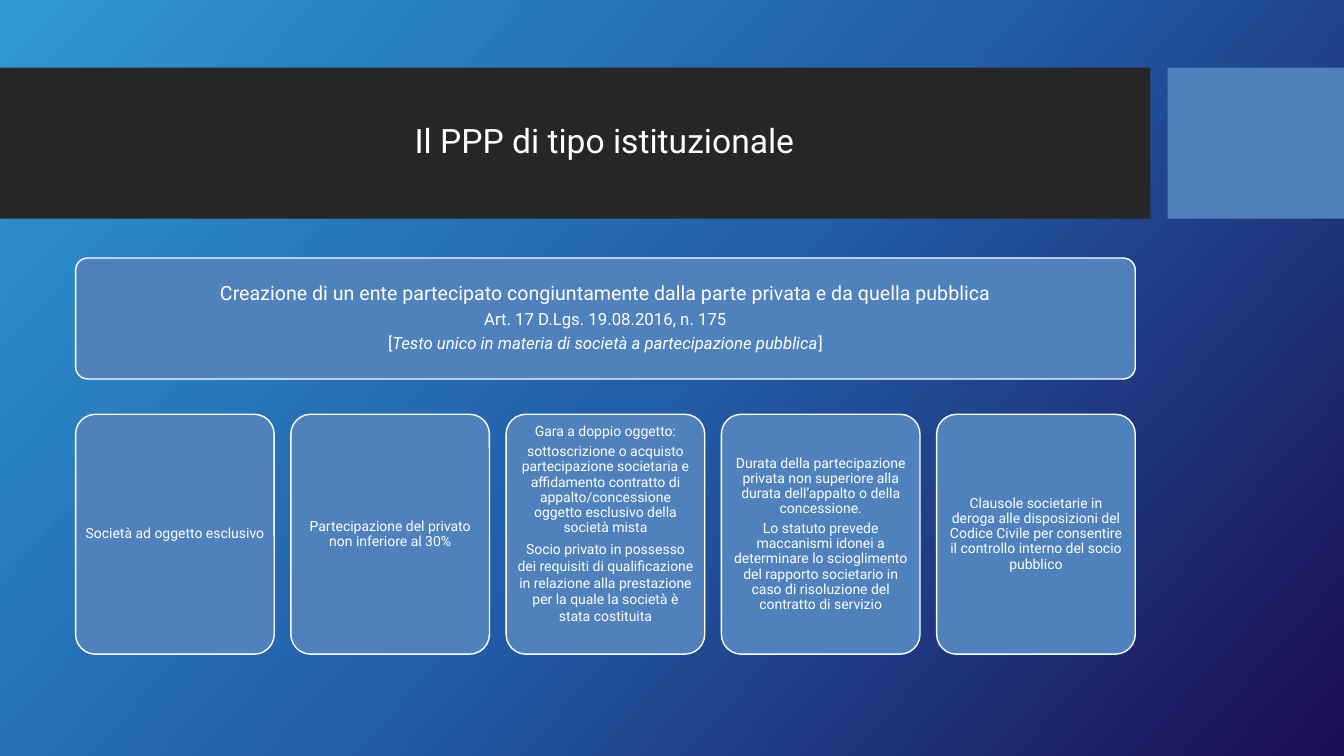
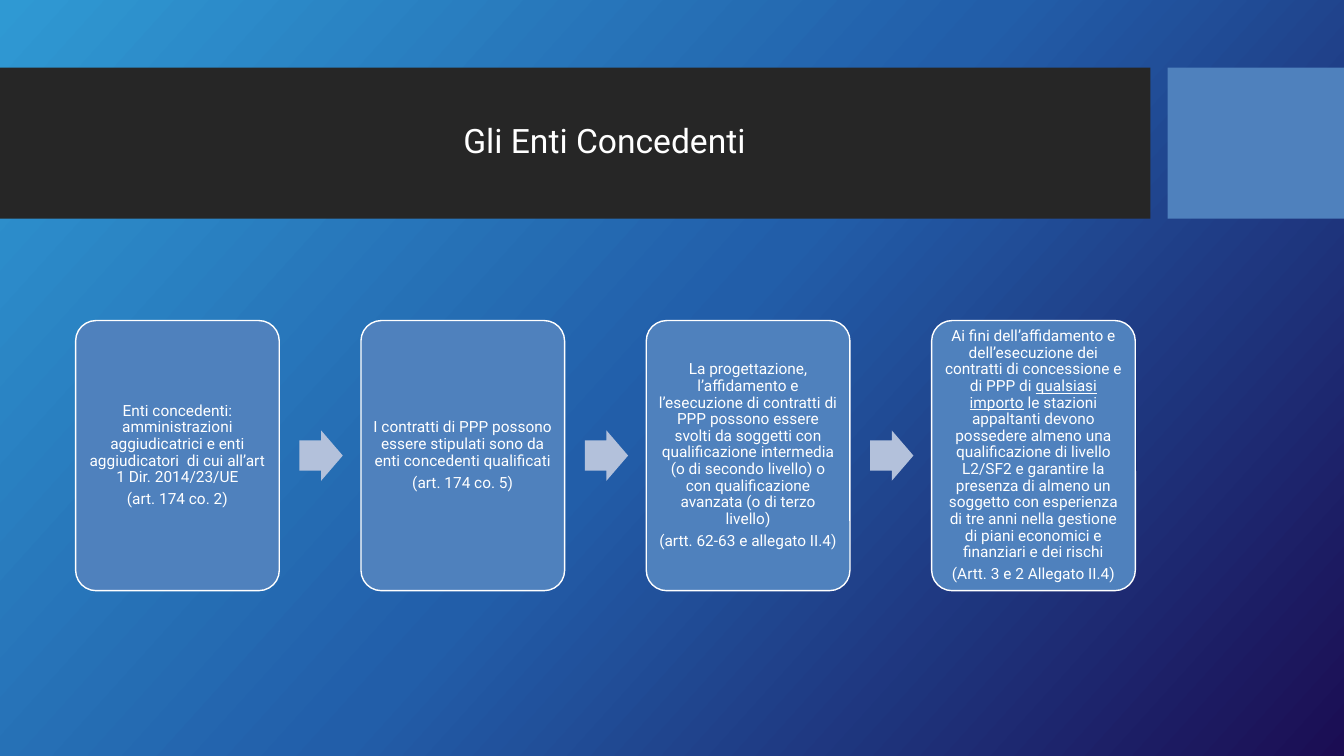
from copy import deepcopy

from pptx import Presentation
from pptx.dml.color import RGBColor
from pptx.enum.shapes import MSO_SHAPE
from pptx.enum.text import MSO_ANCHOR, PP_ALIGN
from pptx.oxml.ns import qn
from pptx.util import Inches, Pt

RECTANGLE = MSO_SHAPE.RECTANGLE
ROUNDED = MSO_SHAPE.ROUNDED_RECTANGLE
ARROW = MSO_SHAPE.RIGHT_ARROW
MIDDLE = MSO_ANCHOR.MIDDLE
CENTER = PP_ALIGN.CENTER
TITLE_ONLY = 5

FONT = "Roboto"
WHITE, DARK, BLUE, PALE = "FFFFFF", "262626", "4F81BD", "B3C1DB"
GRADIENT = [(0, "2F99D3"), (0.5, "225EA9"), (1, "1B0D53")]
LEFT, WIDTH = 0.75, 10.51


def color(value):
    return RGBColor.from_string(value)


def write(frame, paragraphs, size, margin=None, bottom=None):
    """Fill a frame; a paragraph is a dict with spans and optional size, line and after."""
    frame.word_wrap = True
    frame.vertical_anchor = MIDDLE
    if margin is not None:
        frame.margin_left = frame.margin_right = frame.margin_top = Inches(margin)
        frame.margin_bottom = Inches(margin if bottom is None else bottom)
    for index, item in enumerate(paragraphs):
        item = {"spans": item} if not isinstance(item, dict) else item
        spans = [(item["spans"], {})] if isinstance(item["spans"], str) else item["spans"]
        points = item.get("size", size)
        para = frame.paragraphs[0] if index == 0 else frame.add_paragraph()
        para.alignment = CENTER
        para.line_spacing = item.get("line", 0.9)
        para.space_before = Pt(0)
        para.space_after = Pt(item.get("after", round(0.35 * points, 2)))
        for text, style in spans:
            span = para.add_run()
            span.text = text
            font = span.font
            font.name, font.size = FONT, Pt(points)
            font.color.rgb = color(WHITE)
            for name, value in style.items():
                setattr(font, name, value)


class Deck:
    """Holds the presentation, its shared style and the current page."""

    def __init__(self):
        self.file = Presentation()
        self.file.slide_width, self.file.slide_height = Inches(13.33), Inches(7.5)
        self.page = None
        self.set_background()

    def set_background(self):
        master = self.file.slide_master
        fill = master.background.fill
        fill.gradient()
        fill.gradient_angle = 360 - 42
        stop_list = master.element.find(".//" + qn("a:gsLst"))
        stop_list.append(deepcopy(stop_list[-1]))
        for stop, (position, value) in zip(fill.gradient_stops, GRADIENT):
            stop.position = position
            stop.color.rgb = color(value)

    def add_page(self, title):
        self.page = self.file.slides.add_slide(self.file.slide_layouts[TITLE_ONLY])
        self.shape(RECTANGLE, 0, 0.67, 11.41, 1.5, DARK)
        self.shape(RECTANGLE, 11.58, 0.67, 1.75, 1.5, BLUE)
        box = self.page.shapes.title
        box.left, box.top = Inches(0.74), Inches(0.82)
        box.width, box.height = Inches(WIDTH), Inches(1.18)
        write(box.text_frame, [{"spans": title, "after": 0}], 24)
        self.page.shapes._spTree.append(box._element)  # title above the bands

    def shape(self, kind, left, top, width, height, fill, adjustments=()):
        shape = self.page.shapes.add_shape(
            kind, Inches(left), Inches(top), Inches(width), Inches(height))
        shape.shadow.inherit = False
        shape.fill.solid()
        shape.fill.fore_color.rgb = color(fill)
        shape.line.fill.background()
        for index, value in enumerate(adjustments):
            shape.adjustments[index] = value
        return shape

    def card(self, left, top, width, height, paragraphs, **text_format):
        card = self.shape(ROUNDED, left, top, width, height, BLUE, [0.1])
        card.line.color.rgb = color(WHITE)
        card.line.width = Pt(1)
        write(card.text_frame, paragraphs, **text_format)

    def arrow(self, left, top):
        self.shape(ARROW, left, top, 0.43, 0.5, PALE, [0.6, 0.5])


def card_lefts(count, width):
    """Left edges of equally spaced cards across the content width."""
    return [LEFT + index * (WIDTH - width) / (count - 1) for index in range(count)]


def build_institutional(deck):
    deck.add_page("Il PPP di tipo istituzionale")
    deck.card(LEFT, 2.56, WIDTH, 1.2, [
        {"spans": "Creazione di un ente partecipato congiuntamente dalla parte privata "
                  "e da quella pubblica", "size": 14},
        "Art. 17 D.Lgs. 19.08.2016, n. 175",
        [("[", {}),
         ("Testo unico in materia di società a partecipazione pubblica", {"italic": True}),
         ("]", {})],
    ], size=12, margin=0.06)
    features = [
        ["Società ad oggetto esclusivo"],
        ["Partecipazione del privato non inferiore al 30%"],
        ["Gara a doppio oggetto:",
         "sottoscrizione o acquisto partecipazione societaria e affidamento contratto di "
         "appalto/concessione oggetto esclusivo della società mista",
         {"spans": "Socio privato in possesso dei requisiti di qualificazione in relazione "
                   "alla prestazione per la quale la società è stata costituita",
          "line": 1.0, "after": 0}],
        ["Durata della partecipazione privata non superiore alla durata dell’appalto o "
         "della concessione.",
         "Lo statuto prevede maccanismi idonei a determinare lo scioglimento del rapporto "
         "societario in caso di risoluzione del contratto di servizio"],
        ["Clausole societarie in deroga alle disposizioni del Codice Civile per consentire "
         "il controllo interno del socio pubblico"],
    ]
    width = 1.97
    for left, paragraphs in zip(card_lefts(len(features), width), features):
        bottom = 0.23 if len(paragraphs) == 3 else 0.04
        deck.card(left, 4.11, width, 2.38, paragraphs, size=10, margin=0.04, bottom=bottom)


def build_grantors(deck):
    deck.add_page("Gli Enti Concedenti")
    steps = [
        ["Enti concedenti: amministrazioni aggiudicatrici e enti aggiudicatori  di cui "
         "all’art 1 Dir. 2014/23/UE",
         "(art. 174 co. 2)"],
        ["I contratti di PPP possono essere stipulati sono da enti concedenti qualificati",
         "(art. 174 co. 5)"],
        ["La progettazione, l’affidamento e l’esecuzione di contratti di PPP possono essere "
         "svolti da soggetti con qualificazione intermedia (o di secondo livello) o con "
         "qualificazione avanzata (o di terzo livello)",
         "(artt. 62-63 e allegato II.4)"],
        [[("Ai fini dell’affidamento e dell’esecuzione dei contratti di concessione e di "
           "PPP di ", {}),
          ("qualsiasi importo", {"underline": True}),
          (" le stazioni appaltanti devono possedere almeno una qualificazione di livello "
           "L2/SF2 e garantire la presenza di almeno un soggetto con esperienza di tre anni "
           "nella gestione di piani economici e finanziari e dei rischi", {})],
         "(Artt. 3 e 2 Allegato II.4)"],
    ]
    width = 2.02
    lefts = card_lefts(len(steps), width)
    for left, paragraphs in zip(lefts, steps):
        deck.card(left, 3.18, width, 2.68, paragraphs, size=11, margin=0.05)
    for left in lefts[:-1]:
        deck.arrow(left + width + 0.2, 4.27)


def main():
    deck = Deck()
    build_institutional(deck)
    build_grantors(deck)
    deck.file.save("out.pptx")


if __name__ == "__main__":
    main()
